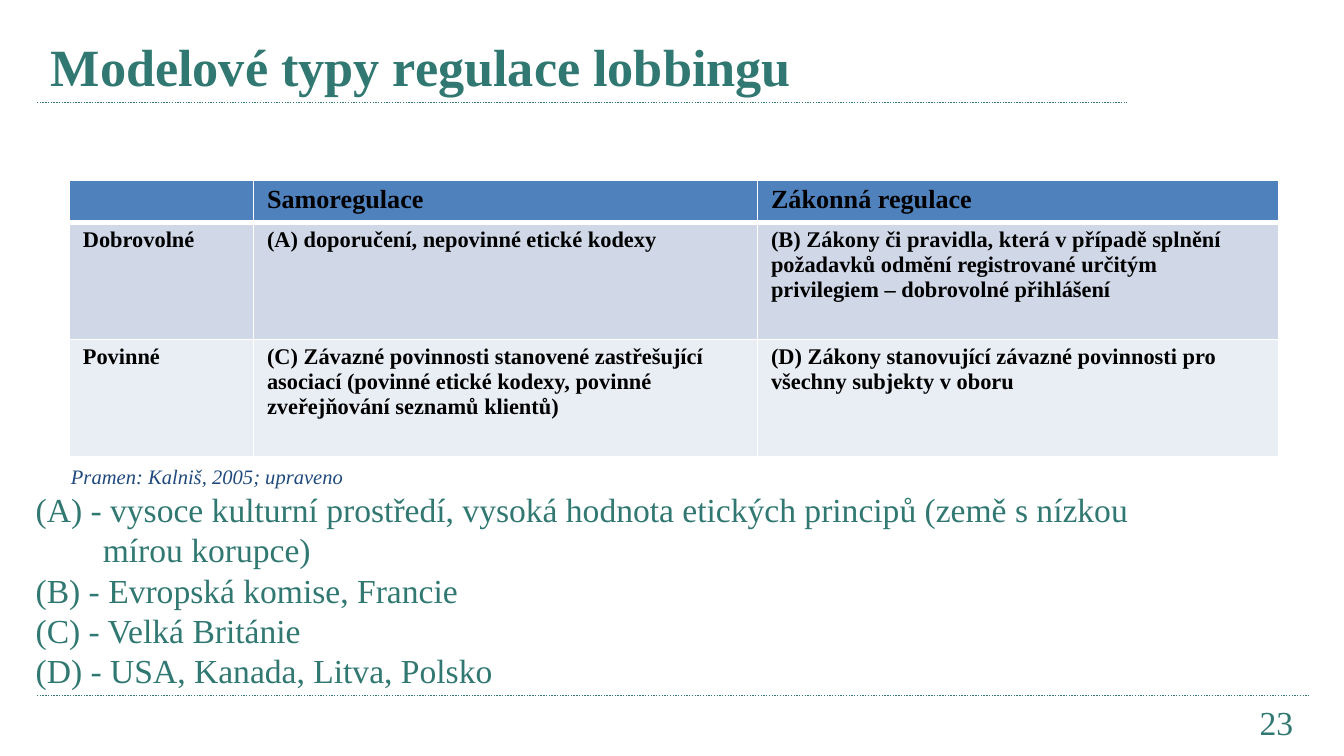
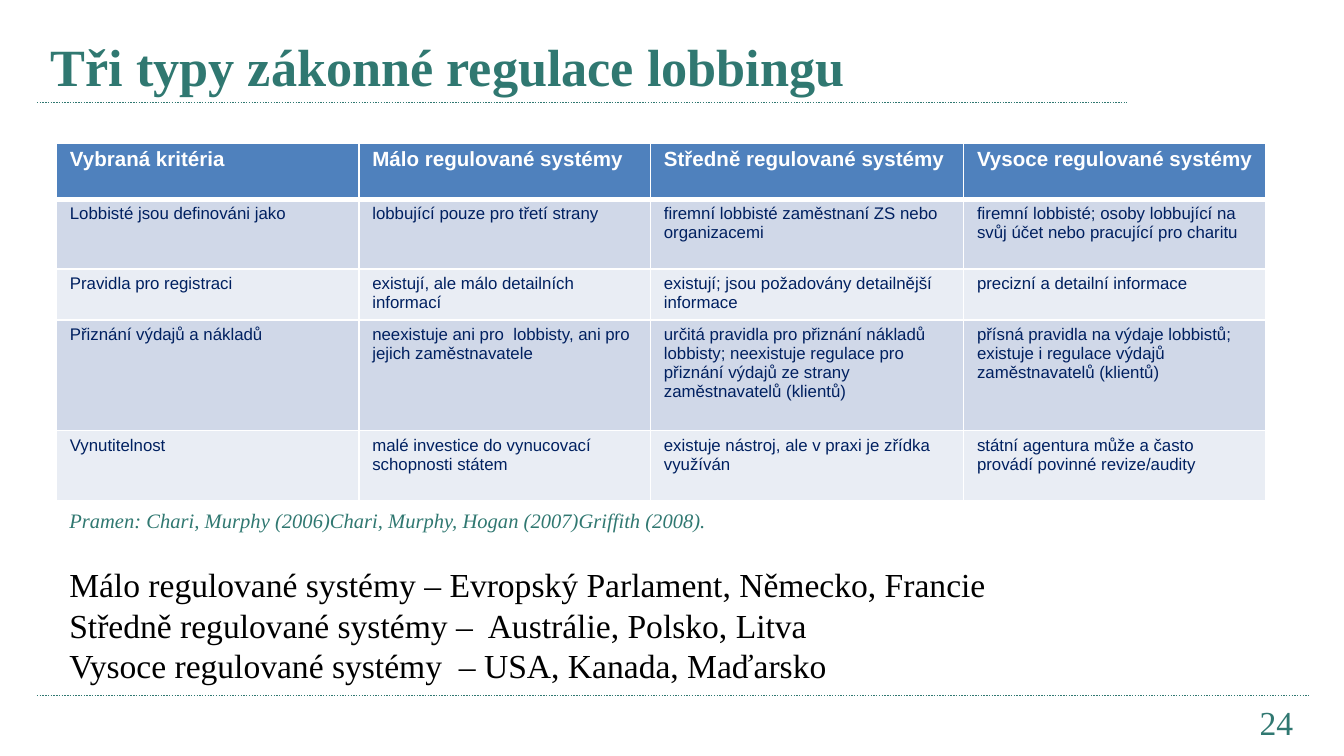
from lxml.etree import SubElement
from pptx import Presentation
from pptx.dml.color import RGBColor
from pptx.enum.dml import MSO_LINE
from pptx.enum.shapes import MSO_CONNECTOR
from pptx.enum.text import MSO_ANCHOR, PP_ALIGN
from pptx.oxml import parse_xml
from pptx.oxml.ns import nsdecls, qn
from pptx.util import Inches, Pt

deck = Presentation()
deck.slide_width = Inches(10)
deck.slide_height = deck.slide_width * 9 // 16
# One hundredth of the slide's width and height
W, H = deck.slide_width / 100, deck.slide_height / 100

# Shared colours and text formats
GREEN, BLUE, WHITE, BLACK = "307871", "4F81BD", "FFFFFF", "000000"
BANDS = ["D0D8E8", "E9EDF4"]
SERIF, SANS = "Times New Roman", "Arial"
TITLE = dict(name=SERIF, size=28, bold=True, color=GREEN)
BODY = dict(name=SERIF, size=18, color=GREEN)
NOTE = dict(name=SERIF, size=11, italic=True, color=GREEN)
RULES = [(2.75, 83.85, 13.6), (2.75, 97.45, 92)]


def tint(code):
    return RGBColor.from_string(code)


def pen(para, text, form):
    run = para.add_run()
    run.text = text
    for key, value in form.items():
        if key == "color":
            run.font.color.rgb = tint(value)
        else:
            setattr(run.font, key, Pt(value) if key == "size" else value)


# Slide content: boxes hold (place, lines), lines hold (text, format, paragraph, indent)
model = dict(
    title="Modelové typy regulace lobbingu",
    page="23",
    at=(5.17, 23.8),
    cols=[13.7, 37.5, 38.75],
    rows=[5, 15.5, 15.5],
    head=dict(name=SERIF, size=14, bold=True, color=BLACK),
    cell=dict(name=SERIF, size=12, bold=True, color=BLACK),
    grid=[
        ["", "Samoregulace", "Zákonná regulace"],
        ["Dobrovolné", "(A) doporučení, nepovinné etické kodexy",
         "(B) Zákony či pravidla, která v případě splnění požadavků odmění "
         "registrované určitým privilegiem – dobrovolné přihlášení"],
        ["Povinné",
         "(C) Závazné povinnosti stanovené zastřešující asociací (povinné "
         "etické kodexy, povinné zveřejňování seznamů klientů)",
         "(D) Zákony stanovující závazné povinnosti pro všechny subjekty v oboru"],
    ],
    boxes=[
        ((4.3, 60.5, 30, 5.16),
         [("Pramen: Kalniš, 2005; upraveno", {**NOTE, "color": "1F497D"}, {}, 0)]),
        ((1.67, 63.8, 98.3, 28.5), [
            ("(A) - vysoce kulturní prostředí, vysoká hodnota etických principů "
             "(země s nízkou", BODY, {}, 0),
            ("mírou korupce)", BODY, {}, 5),
            ("(B) - Evropská komise, Francie", BODY, {}, 0),
            ("(C) - Velká Británie", BODY, {}, 0),
            ("(D) - USA, Kanada, Litva, Polsko", BODY, {}, 0),
        ]),
    ],
)
DARK = {**BODY, "color": BLACK}
legal = dict(
    title="Tři typy zákonné regulace lobbingu",
    page="24",
    at=(4.2, 18.9),
    cols=[22.5, 21.7, 23.3, 22.5],
    rows=[7.47, 9.25, 6.76, 14.6, 9.25],
    head=dict(name=SANS, size=11, bold=True, color=WHITE),
    cell=dict(name=SANS, size=9, bold=False, color="002060"),
    grid=[
        ["Vybraná kritéria", "Málo regulované systémy",
         "Středně regulované systémy", "Vysoce regulované systémy"],
        ["Lobbisté jsou definováni jako", "lobbující pouze pro třetí strany",
         "firemní lobbisté zaměstnaní ZS nebo organizacemi",
         "firemní lobbisté; osoby lobbující na svůj účet nebo pracující pro charitu"],
        ["Pravidla pro registraci", "existují, ale málo detailních informací",
         "existují; jsou požadovány detailnější informace",
         "precizní a detailní informace"],
        ["Přiznání výdajů a nákladů",
         "neexistuje ani pro  lobbisty, ani pro jejich zaměstnavatele",
         "určitá pravidla pro přiznání nákladů lobbisty; neexistuje regulace "
         "pro přiznání výdajů ze strany zaměstnavatelů (klientů)",
         "přísná pravidla na výdaje lobbistů; existuje i regulace výdajů "
         "zaměstnavatelů (klientů)"],
        ["Vynutitelnost", "malé investice do vynucovací schopnosti státem",
         "existuje nástroj, ale v praxi je zřídka využíván",
         "státní agentura může a často provádí povinné revize/audity"],
    ],
    boxes=[
        ((4.17, 66.3, 89.8, 25.44), [
            ("Pramen: Chari, Murphy (2006)Chari, Murphy, Hogan (2007)Griffith (2008).",
             NOTE, {}, 0),
            ("Málo regulované systémy – Evropský Parlament, Německo, Francie",
             DARK, dict(space_before=Pt(17)), 0),
            ("Středně regulované systémy –  Austrálie, Polsko, Litva", DARK, {}, 0),
            ("Vysoce regulované systémy  – USA, Kanada, Maďarsko", DARK, {}, 0),
        ]),
    ],
)

for part in (model, legal):
    slide = deck.slides.add_slide(deck.slide_layouts[6])

    # Dotted rules
    for left, right, y in RULES:
        rule = slide.shapes.add_connector(
            MSO_CONNECTOR.STRAIGHT, int(left * W), int(y * H), int(right * W), int(y * H))
        rule.line.color.rgb = tint(GREEN)
        rule.line.width = Pt(0.75)
        rule.line.dash_style = MSO_LINE.ROUND_DOT
        SubElement(rule._element.spPr, qn("a:effectLst"))

    # Table
    cols, rows = part["cols"], part["rows"]
    left, top = part["at"]
    table = slide.shapes.add_table(
        len(rows), len(cols), int(left * W), int(top * H),
        int(sum(cols) * W), int(sum(rows) * H)).table
    table.horz_banding = False
    for col, width in zip(table.columns, cols):
        col.width = int(width * W)
    for r, texts in enumerate(part["grid"]):
        table.rows[r].height = int(rows[r] * H)
        form = part["cell" if r else "head"]
        for c, text in enumerate(texts):
            cell = table.cell(r, c)
            cell.margin_left = cell.margin_right = Inches(0.1)
            cell.margin_top = cell.margin_bottom = Inches(0.04)
            for side in "LRTB":
                thick = 3 if (r, side) in ((0, "B"), (1, "T")) else 1
                cell._tc.get_or_add_tcPr().append(parse_xml(
                    f'<a:ln{side} {nsdecls("a")} w="{Pt(thick)}"><a:solidFill>'
                    f'<a:srgbClr val="{WHITE}"/></a:solidFill></a:ln{side}>'))
            cell.fill.solid()
            cell.fill.fore_color.rgb = tint(BANDS[(r - 1) % 2] if r else BLUE)
            para = cell.text_frame.paragraphs[0]
            if text:
                pen(para, text, form)
            else:
                # Keep an empty cell from stretching its row
                SubElement(para._p, qn("a:endParaRPr"), sz=str(form["size"] * 100))

    # Title, page number and running text
    frame = [
        ((2.8, 3.7, 83.9, 9.96), [(part["title"], TITLE, {}, 0)]),
        ((85.4, 92, 11.8, 5.34),
         [(part["page"], BODY, dict(alignment=PP_ALIGN.RIGHT), 0)]),
    ]
    for (left, top, width, height), lines in frame + part["boxes"]:
        box = slide.shapes.add_textbox(
            int(left * W), int(top * H), int(width * W), int(height * H)).text_frame
        box.word_wrap = True
        if lines[0][1] is TITLE:
            box.vertical_anchor = MSO_ANCHOR.BOTTOM
        for i, (text, form, look, indent) in enumerate(lines):
            para = box.add_paragraph() if i else box.paragraphs[0]
            for key, value in look.items():
                setattr(para, key, value)
            if indent:
                para._p.get_or_add_pPr().set("marL", str(int(indent * W)))
            pen(para, text, form)

deck.save("out.pptx")
